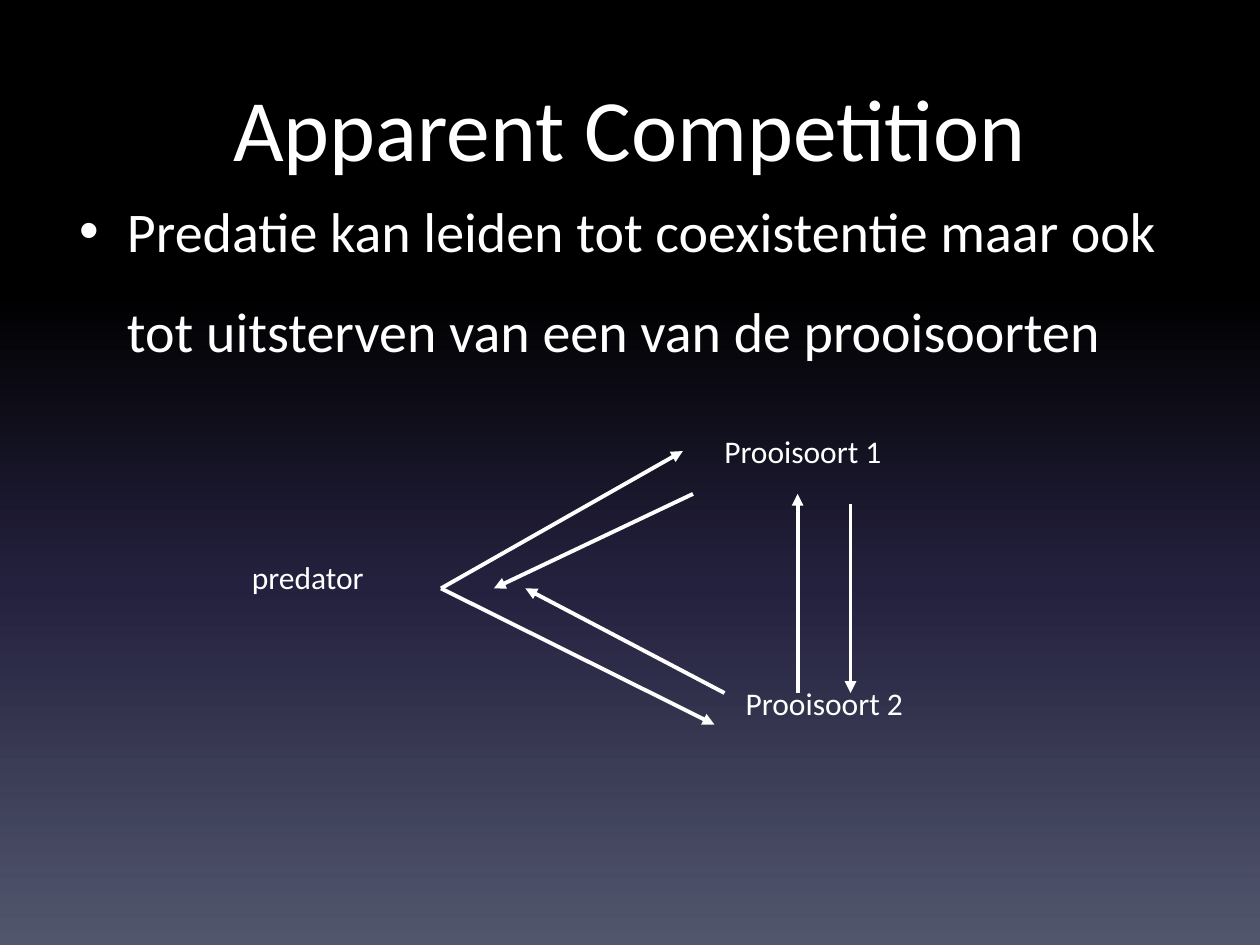
from lxml import etree
from pptx import Presentation, util as u
from pptx.dml.color import RGBColor
from pptx.enum import shapes, text
from pptx.oxml import ns

COLORS = {"white": "FFFFFF", "black": "000000", "indigo": "24213E", "slate": "51566D"}


def add_text(page, words, left, top, width, height, size):
    box = page.shapes.add_textbox(*map(u.Inches, (left, top, width, height)))
    box.text_frame.word_wrap = True
    para = box.text_frame.paragraphs[0]
    para.text = words
    para.font.name = "Calibri"
    para.font.size = u.Pt(size)
    para.font.color.rgb = RGBColor.from_string(COLORS["white"])
    return box.text_frame, para


def add_xml(parent, tag, **attributes):
    return etree.SubElement(parent, ns.qn(tag), attributes)


deck = Presentation()
deck.slide_width = u.Inches(10)
deck.slide_height = u.Inches(7.5)
page = deck.slides.add_slide(deck.slide_layouts[6])

fill = page.background.fill
fill.gradient()
fill.gradient_angle = 270
stops = page.background._cSld.find(".//" + ns.qn("a:gsLst"))
for stop in list(stops):
    stops.remove(stop)
for percent, color in [(0, "black"), (31, "black"), (62, "indigo"), (100, "slate")]:
    stop = add_xml(stops, "a:gs", pos=str(percent * 1000))
    add_xml(stop, "a:srgbClr", val=COLORS[color])

frame, para = add_text(page, "Apparent Competition", 0.5, 0.5, 9, 1.25, 50)
frame.margin_top = u.Inches(0.09)
para.alignment = text.PP_ALIGN.CENTER

statement = "Predatie kan leiden tot coexistentie maar ook tot uitsterven van een van de prooisoorten"
frame, para = add_text(page, statement, 0.53, 0.81, 9, 2.56, 32)
frame.vertical_anchor = text.MSO_ANCHOR.MIDDLE
para.line_spacing = 1.5
para.space_before = u.Pt(6.4)
properties = para._p.get_or_add_pPr()
properties.set("marL", str(u.Inches(0.38)))
properties.set("indent", str(u.Inches(-0.38)))
bullet_font = etree.Element(ns.qn("a:buFont"), typeface="Arial")
bullet = etree.Element(ns.qn("a:buChar"), char="•")
properties.find(ns.qn("a:spcBef")).addnext(bullet_font)
bullet_font.addnext(bullet)

for species, left, top, width in [
    ("predator", 1.9, 4.38, 1.31),
    ("Prooisoort 1", 5.65, 3.38, 1.84),
    ("Prooisoort 2", 5.82, 5.38, 1.84),
]:
    add_text(page, species, left, top, width, 0.5, 18)

for ends in [
    (3.5, 4.67, 5.67, 5.75),
    (3.5, 4.67, 5.42, 3.58),
    (6.33, 5.5, 6.33, 3.92),
    (6.75, 4, 6.75, 5.5),
    (5.5, 3.92, 3.92, 4.67),
    (5.75, 5.5, 4.17, 4.67),
]:
    arrow = page.shapes.add_connector(shapes.MSO_CONNECTOR.STRAIGHT, *map(u.Inches, ends))
    arrow.line.color.rgb = RGBColor.from_string(COLORS["white"])
    arrow.line.width = u.Pt(2.25)
    add_xml(arrow.line._get_or_add_ln(), "a:tailEnd", type="triangle")
    add_xml(arrow._element.spPr, "a:effectLst")

deck.save("out.pptx")
